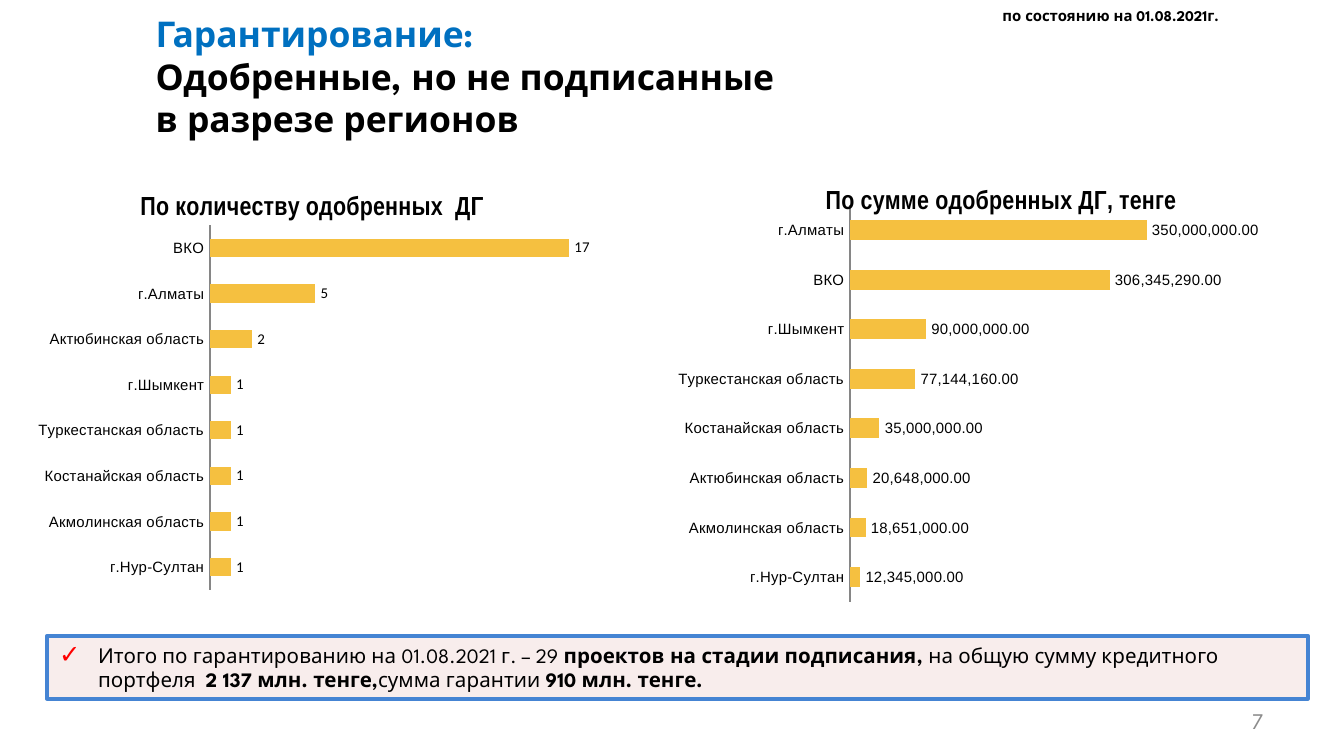
from lxml.etree import SubElement
from pptx import Presentation
from pptx.chart.data import CategoryChartData
from pptx.dml.color import RGBColor
from pptx.enum.chart import XL_CHART_TYPE as ChartType, XL_LABEL_POSITION as LabelPosition, XL_TICK_MARK as TickMark
from pptx.enum.shapes import MSO_SHAPE as Shape
from pptx.enum.text import MSO_ANCHOR as Anchor, PP_ALIGN as Align
from pptx.oxml import parse_xml
from pptx.oxml.ns import nsdecls, qn
from pptx.util import Inches, Pt

WIDTH = 10
HEIGHT = WIDTH * 9 / 16
FONT = "League Spartan"
COLORS = {"black": "000000", "blue": "0070C0", "bar": "F5C040", "axis": "868686",
          "number": "8C8C8C", "panel": "F2DCDB", "border": "4584D3", "check": "FF0000"}

TITLE = [("Гарантирование: ", "blue"), ("Одобренные, но не подписанные ", "black"),
         ("в разрезе регионов", "black")]
DATE = "по состоянию на 01.08.2021г."
PAGE = "7"
SUMMARY = [("Итого по гарантированию на 01.08.2021 г. – 29 ", False),
           ("проектов на стадии подписания, ", True),
           ("на общую сумму кредитного портфеля  ", False),
           ("2 137 млн. тенге,", True), ("сумма гарантии ", False),
           ("910 млн. тенге.", True)]
CHARTS = [
    {"title": "По количеству одобренных  ДГ", "title_at": (0.22, 0.04),
     "box": (0, 1.27, 4.59, 3.25), "plot": (0.34, 0.125, 0.617, 0.835),
     "max": 18, "format": "#,##0", "font": "Calibri",
     "data": [("г.Нур-Султан", 1), ("Акмолинская область", 1), ("Костанайская область", 1),
              ("Туркестанская область", 1), ("г.Шымкент", 1), ("Актюбинская область", 2),
              ("г.Алматы", 5), ("ВКО", 17)]},
    {"title": "По сумме одобренных ДГ, тенге", "title_at": (0.27, 0.03),
     "box": (4.69, 1.25, 5.25, 3.48), "plot": (0.311, 0.08, 0.481, 0.848),
     "max": 400000000, "format": "#,##0.00", "font": "Arial",
     "data": [("г.Нур-Султан", 12345000), ("Акмолинская область", 18651000),
              ("Актюбинская область", 20648000), ("Костанайская область", 35000000),
              ("Туркестанская область", 77144160), ("г.Шымкент", 90000000),
              ("ВКО", 306345290), ("г.Алматы", 350000000)]},
]


def color(name):
    return RGBColor.from_string(COLORS[name])


def style(font, size, name=FONT, ink="black", bold=False):
    font.size, font.name, font.bold = Pt(size), name, bold
    font.color.rgb = color(ink)


def add_run(paragraph, text, size, **options):
    run = paragraph.add_run()
    run.text = text
    style(run.font, size, **options)


def add_box(slide, box, anchor=Anchor.TOP):
    frame = slide.shapes.add_textbox(*map(Inches, box)).text_frame
    frame.word_wrap = True
    frame.vertical_anchor = anchor
    return frame


def set_layout(parent, index, shares, target=""):
    for old in parent.findall(qn("c:layout")):
        parent.remove(old)
    values = "".join(f'<c:{tag} val="{value}"/>' for tag, value in zip("xywh", shares))
    parent.insert(index, parse_xml(
        f'<c:layout {nsdecls("c")}><c:manualLayout>{target}'
        f'<c:xMode val="edge"/><c:yMode val="edge"/>{values}</c:manualLayout></c:layout>'))


def add_bar_chart(slide, item):
    data = CategoryChartData(number_format=item["format"])
    names, values = zip(*item["data"])
    data.categories = names
    data.add_series("Series 1", values)
    chart = slide.shapes.add_chart(
        ChartType.BAR_CLUSTERED, *map(Inches, item["box"]), data).chart
    style(chart.font, 10, name="Calibri")
    chart.has_legend = False
    title = chart.chart_title
    add_run(title.text_frame.paragraphs[0], item["title"], 14, name="Arial Narrow", bold=True)
    title.include_in_layout = False
    set_layout(title._element, 1, item["title_at"])
    set_layout(chart._chartSpace.chart.plotArea, 0, item["plot"],
               '<c:layoutTarget val="inner"/>')

    categories, scale = chart.category_axis, chart.value_axis
    categories.major_tick_mark = categories.minor_tick_mark = TickMark.NONE
    categories.format.line.color.rgb = color("axis")
    categories.format.line.width = Pt(1)
    style(categories.tick_labels.font, 8, name="Arial")
    scale.minimum_scale, scale.maximum_scale = 0, item["max"]
    scale.has_major_gridlines = False
    scale.visible = False

    plot = chart.plots[0]
    plot.gap_width = 150
    plot.vary_by_categories = False
    fill = plot.series[0].format.fill
    fill.solid()
    fill.fore_color.rgb = color("bar")
    labels = plot.series[0].data_labels
    labels.show_value = True
    labels.number_format, labels.number_format_is_linked = item["format"], False
    labels.position = LabelPosition.OUTSIDE_END
    style(labels.font, 8, name=item["font"])


def add_check_bullet(paragraph):
    properties = paragraph._p.get_or_add_pPr()
    properties.set("marL", str(Inches(0.3)))
    properties.set("indent", str(Inches(-0.29)))
    bullet_color = SubElement(properties, qn("a:buClr"))
    SubElement(bullet_color, qn("a:srgbClr"), val=COLORS["check"])
    SubElement(properties, qn("a:buSzPct"), val="125000")
    SubElement(properties, qn("a:buFont"), typeface="Arial")
    SubElement(properties, qn("a:buChar"), char="✓")


def add_summary(slide):
    panel = slide.shapes.add_shape(Shape.RECTANGLE, *map(Inches, (0.35, 4.73, 9.38, 0.47)))
    panel.shadow.inherit = False
    panel.fill.solid()
    panel.fill.fore_color.rgb = color("panel")
    shade = panel._element.spPr.find(qn("a:solidFill"))[0]
    SubElement(shade, qn("a:alpha"), val="50000")
    panel.line.color.rgb = color("border")
    panel.line.width = Pt(2)
    frame = panel.text_frame
    frame.word_wrap = True
    frame.vertical_anchor = Anchor.MIDDLE
    frame.margin_left = frame.margin_right = Inches(0.08)
    frame.margin_top = frame.margin_bottom = Inches(0.04)
    paragraph = frame.paragraphs[0]
    add_check_bullet(paragraph)
    paragraph.alignment = Align.LEFT
    paragraph.space_after = Pt(6)
    for text, bold in SUMMARY:
        add_run(paragraph, text, 11, bold=bold)


def main():
    presentation = Presentation()
    presentation.slide_width, presentation.slide_height = Inches(WIDTH), Inches(HEIGHT)
    slide = presentation.slides.add_slide(presentation.slide_layouts[6])

    paragraph = add_box(slide, (1.06, 0.04, 8.94, 1.05)).paragraphs[0]
    for index, (text, ink) in enumerate(TITLE):
        if index:
            paragraph.add_line_break()
        add_run(paragraph, text, 19, ink=ink, bold=True)

    add_run(add_box(slide, (7.36, 0, 2.28, 0.24)).paragraphs[0], DATE, 8, bold=True)
    for item in CHARTS:
        add_bar_chart(slide, item)
    add_summary(slide)

    paragraph = add_box(slide, (7.17, 5.21, 2.33, 0.3), Anchor.MIDDLE).paragraphs[0]
    paragraph.alignment = Align.RIGHT
    add_run(paragraph, PAGE, 12, ink="number")
    presentation.save("out.pptx")


if __name__ == "__main__":
    main()
